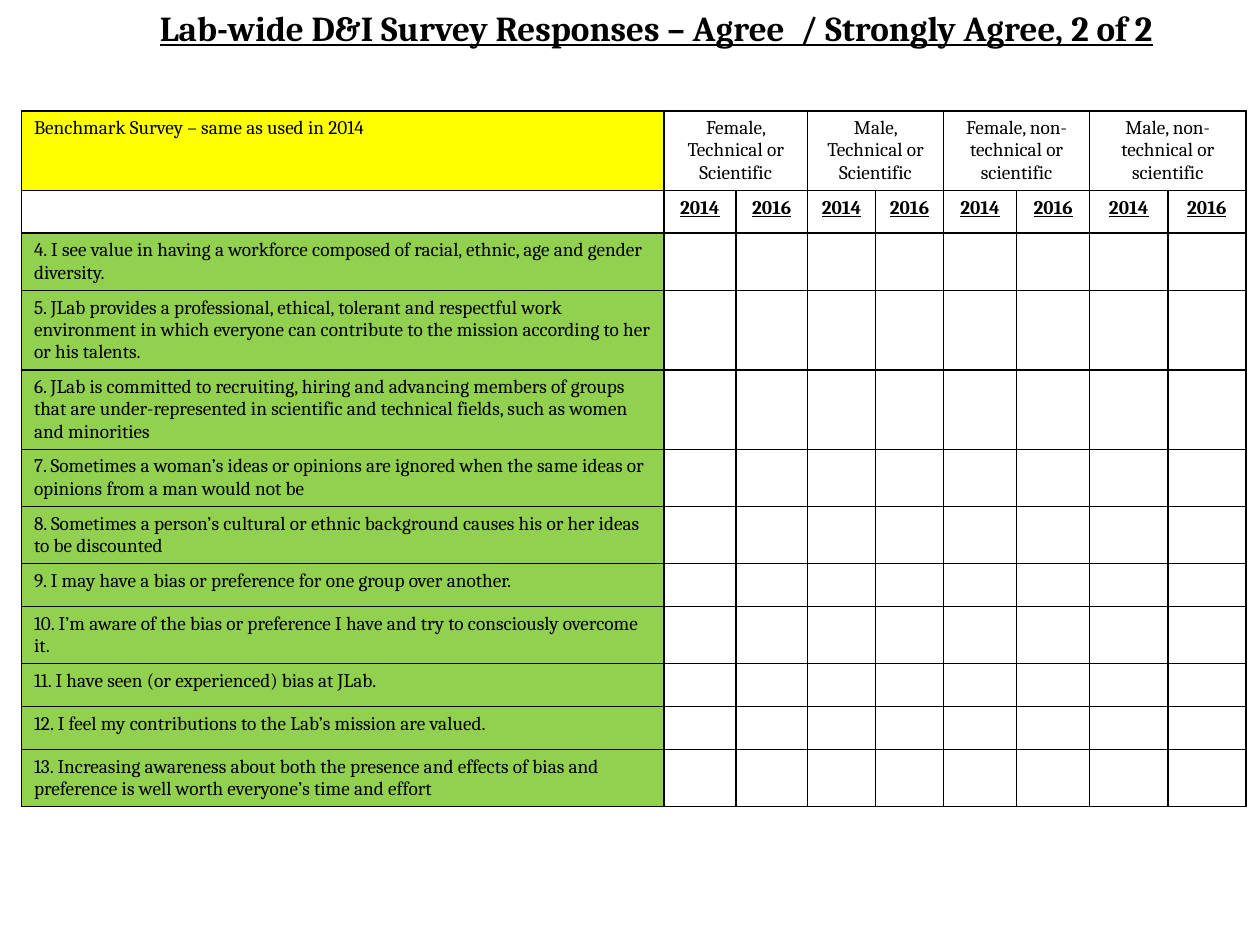
from lxml.etree import SubElement
from pptx import Presentation
from pptx.dml.color import RGBColor
from pptx.enum.text import MSO_ANCHOR, MSO_AUTO_SIZE, PP_ALIGN
from pptx.oxml.ns import qn
from pptx.util import Inches, Pt

FONT = "Cambria"
BLACK, WHITE, YELLOW, GREEN = "000000", "FFFFFF", "FFFF00", "92D050"
TEXT_SIZE = 11
ROW_HEIGHT = 0.34
QUESTION_WIDTH = 5.1
YEARS = ["2014", "2016"]

# Respondent groups with the width of each of their year columns
GROUPS = [
    ("Female, Technical or Scientific", 0.57),
    ("Male, Technical or Scientific", 0.54),
    ("Female, non-technical or scientific", 0.58),
    ("Male, non-technical or scientific", 0.62),
]
QUESTIONS = [
    "4. I see value in having a workforce composed of racial, ethnic, age and gender diversity.",
    "5. JLab provides a professional, ethical, tolerant and respectful work environment "
    "in which everyone can contribute to the mission according to her or his talents.",
    "6. JLab is committed to recruiting, hiring and advancing members of groups that are "
    "under-represented in scientific and technical fields, such as women and minorities",
    "7. Sometimes a woman’s ideas or opinions are ignored when the same ideas or opinions "
    "from a man would not be",
    "8. Sometimes a person’s cultural or ethnic background causes his or her ideas to be discounted",
    "9. I may have a bias or preference for one group over another.",
    "10. I’m aware of the bias or preference I have and try to consciously overcome it.",
    "11. I have seen (or experienced) bias at JLab.",
    "12. I feel my contributions to the Lab’s mission are valued.",
    "13. Increasing awareness about both the presence and effects of bias and preference "
    "is well worth everyone’s time and effort",
]


def color(value):
    return RGBColor.from_string(value)


def write(para, text, size, strong=False, align=PP_ALIGN.LEFT):
    para.alignment = align
    span = para.add_run()
    span.text = text
    font = span.font
    font.name, font.size = FONT, Pt(size)
    font.bold = font.underline = strong
    font.color.rgb = color(BLACK)


def format_cell(cell, fill):
    """Give a cell its border, its fill and a small size while empty."""
    properties = cell._tc.get_or_add_tcPr()
    for side in ("lnL", "lnR", "lnT", "lnB"):
        line = SubElement(properties, qn(f"a:{side}"), w=str(Pt(1)))
        SubElement(SubElement(line, qn("a:solidFill")), qn("a:srgbClr"), val=BLACK)
    cell.fill.solid()
    cell.fill.fore_color.rgb = color(fill)
    para = cell.text_frame.paragraphs[0]
    SubElement(para._p, qn("a:endParaRPr"), sz=str(TEXT_SIZE * 100))


def add_title(page, left, top, width, height):
    title = page.shapes.title
    title.left, title.top = Inches(left), Inches(top)
    title.width, title.height = Inches(width), Inches(height)
    frame = title.text_frame
    frame.word_wrap = True
    frame.auto_size = MSO_AUTO_SIZE.NONE
    frame.vertical_anchor = MSO_ANCHOR.TOP
    write(frame.paragraphs[0],
          "Lab-wide D&I Survey Responses – Agree  / Strongly Agree, 2 of 2",
          20, True, PP_ALIGN.CENTER)


def add_survey_table(page, left, top):
    widths = [QUESTION_WIDTH] + [width for _, width in GROUPS for _ in YEARS]
    row_count = len(QUESTIONS) + 2
    table = page.shapes.add_table(
        row_count, len(widths), Inches(left), Inches(top),
        Inches(sum(widths)), Inches(ROW_HEIGHT * row_count)).table
    table.first_row = table.horz_banding = False
    for column, width in zip(table.columns, widths):
        column.width = Inches(width)

    # Fills and borders
    first_fills = [YELLOW, WHITE] + [GREEN] * len(QUESTIONS)
    for row, first_fill in zip(table.rows, first_fills):
        row.height = Inches(ROW_HEIGHT)
        for index, cell in enumerate(row.cells):
            format_cell(cell, WHITE if index else first_fill)

    def fill_text(row, column, text, **style):
        para = table.cell(row, column).text_frame.paragraphs[0]
        write(para, text, TEXT_SIZE, **style)

    # Group headings over pairs of year columns
    fill_text(0, 0, "Benchmark Survey – same as used in 2014")
    for group, (name, _) in enumerate(GROUPS):
        start = 1 + group * len(YEARS)
        table.cell(0, start).merge(table.cell(0, start + len(YEARS) - 1))
        fill_text(0, start, name, align=PP_ALIGN.CENTER)
        for offset, year in enumerate(YEARS):
            fill_text(1, start + offset, year, strong=True, align=PP_ALIGN.CENTER)

    # Survey statements
    for row, question in enumerate(QUESTIONS, start=2):
        fill_text(row, 0, question)


def main():
    deck = Presentation()
    deck.slide_width, deck.slide_height = Inches(10), Inches(7.5)
    page = deck.slides.add_slide(deck.slide_layouts[5])
    add_survey_table(page, 0.17, 0.88)
    add_title(page, 0.92, 0, 8.58, 0.44)
    deck.save("out.pptx")


if __name__ == "__main__":
    main()
